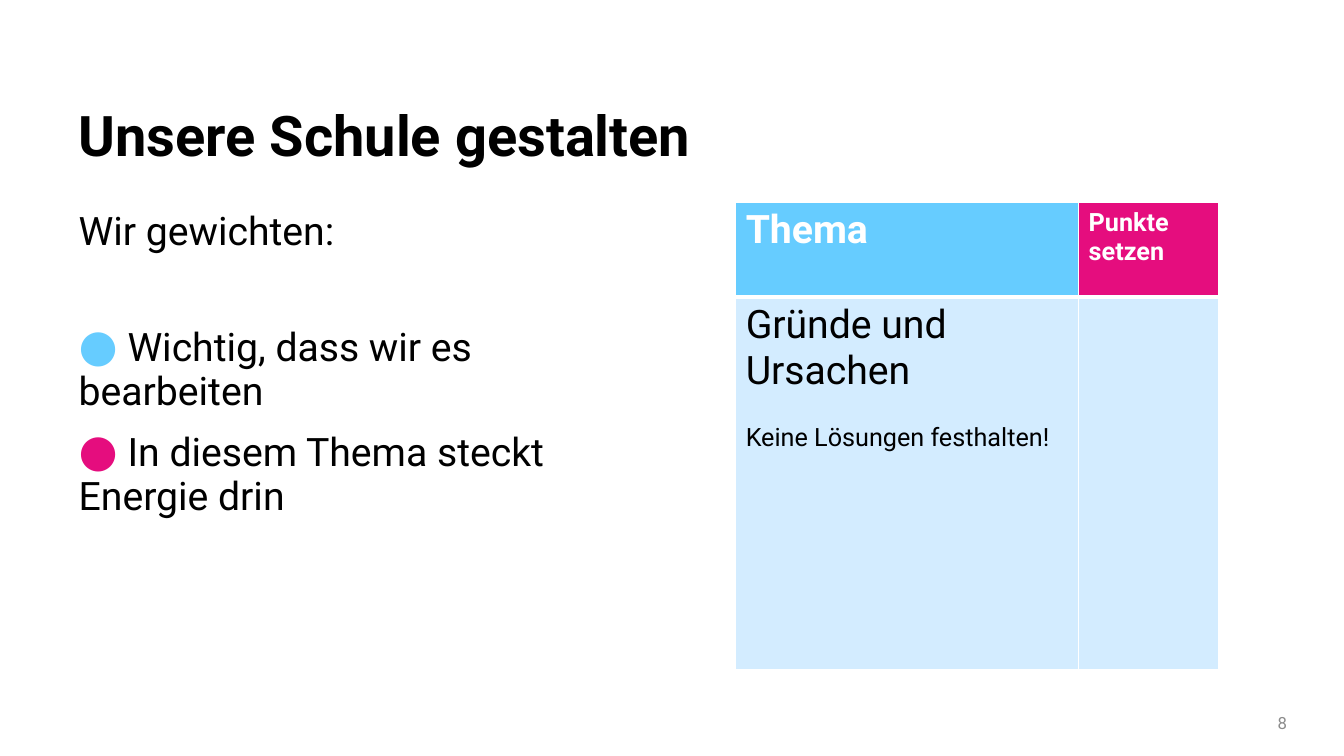
import pptx
import pptx.dml.color
import pptx.enum.text
import pptx.oxml
import pptx.oxml.ns
import pptx.util

Pt = pptx.util.Pt
RGBColor = pptx.dml.color.RGBColor
PP_ALIGN = pptx.enum.text.PP_ALIGN
MSO_ANCHOR = pptx.enum.text.MSO_ANCHOR
MSO_AUTO_SIZE = pptx.enum.text.MSO_AUTO_SIZE

BLACK = RGBColor(0x00, 0x00, 0x00)
WHITE = RGBColor(0xFF, 0xFF, 0xFF)
GREY = RGBColor(0x8C, 0x8C, 0x8C)
BLUE = RGBColor(0x66, 0xCC, 0xFF)
PINK = RGBColor(0xE5, 0x0D, 0x7E)
PALE_BLUE = RGBColor(0xD3, 0xEC, 0xFF)


def set_font(font, size, color, bold=False):
    font.name = "Roboto"
    font.size = Pt(size)
    font.bold = bold
    font.color.rgb = color


def add_border(cell, side, width):
    """Draw one white edge; side is L, R, T or B."""
    cell._tc.get_or_add_tcPr().append(pptx.oxml.parse_xml(
        f'<a:ln{side} {pptx.oxml.ns.nsdecls("a")} w="{Pt(width)}">'
        f'<a:solidFill><a:srgbClr val="{WHITE}"/></a:solidFill></a:ln{side}>'))


presentation = pptx.Presentation()
presentation.slide_width = Pt(960)
presentation.slide_height = Pt(540)
slide = presentation.slides.add_slide(presentation.slide_layouts[1])

# Title
title = slide.shapes.title
title.left, title.top, title.width, title.height = Pt(49), Pt(73.5), Pt(878), Pt(57)
title.text_frame.text = "Unsere Schule gestalten"
title.text_frame.vertical_anchor = MSO_ANCHOR.TOP
title.text_frame.auto_size = MSO_AUTO_SIZE.NONE
heading = title.text_frame.paragraphs[0]
heading.alignment = PP_ALIGN.LEFT
heading.line_spacing = 0.9
set_font(heading.font, 40, BLACK, True)

# Weighting criteria, each marked by a coloured dot
criteria = slide.placeholders[1]
criteria.left, criteria.top, criteria.width, criteria.height = Pt(49), Pt(147.5), Pt(420.5), Pt(340)
criteria.text_frame.auto_size = MSO_AUTO_SIZE.NONE
criteria_lines = [
    (None, "Wir gewichten:", 0),
    (BLUE, " Wichtig, dass wir es bearbeiten", 49.5),
    (PINK, " In diesem Thema steckt Energie drin", 10),
]
for index, (dot_color, wording, space_before) in enumerate(criteria_lines):
    line = criteria.text_frame.paragraphs[0] if index == 0 else criteria.text_frame.add_paragraph()
    properties = line._p.get_or_add_pPr()
    properties.set("marL", "0")
    properties.set("indent", "0")
    properties.append(pptx.oxml.parse_xml(f'<a:buNone {pptx.oxml.ns.nsdecls("a")}/>'))
    line.line_spacing = 0.9
    line.space_before = Pt(space_before)
    if dot_color is not None:
        dot = line.add_run()
        dot.text = "●"
        set_font(dot.font, 32, dot_color)
    statement = line.add_run()
    statement.text = wording
    set_font(statement.font, 28, BLACK)

# Topic table: per cell its fill and paragraphs (text, size, space before)
topics = slide.shapes.add_table(2, 2, Pt(525.5), Pt(144.75), Pt(345), Pt(333.5)).table
topics.columns[0].width, topics.columns[1].width = Pt(245), Pt(100)
topics.rows[0].height, topics.rows[1].height = Pt(67.5), Pt(266)
topic_rows = [
    [(BLUE, [("Thema", 28, 0)]), (PINK, [("Punkte setzen", 18, 0)])],
    [(PALE_BLUE, [("Gründe und Ursachen", 28, 0), ("Keine Lösungen festhalten!", 18, 21)]),
     (PALE_BLUE, [])],
]
for row, row_cells in enumerate(topic_rows):
    is_header = row == 0
    for column, (fill_color, entries) in enumerate(row_cells):
        cell = topics.cell(row, column)
        for side, width in zip("LRTB", (1, 1, 1, 3) if is_header else (1, 1, 3, 1)):
            add_border(cell, side, width)
        cell.fill.solid()
        cell.fill.fore_color.rgb = fill_color
        for index, (wording, size, space_before) in enumerate(entries):
            entry = cell.text_frame.paragraphs[0] if index == 0 else cell.text_frame.add_paragraph()
            entry.text = wording
            entry.space_before = Pt(space_before)
            set_font(entry.font, size, WHITE if is_header else BLACK, is_header)

# Page number
page_number = slide.shapes.add_textbox(Pt(813.5), Pt(502), Pt(113), Pt(28)).text_frame
page_number.word_wrap = True
page_number.vertical_anchor = MSO_ANCHOR.MIDDLE
page_number.text = "8"
page_number.paragraphs[0].alignment = PP_ALIGN.RIGHT
set_font(page_number.paragraphs[0].font, 12, GREY)

presentation.save("out.pptx")
